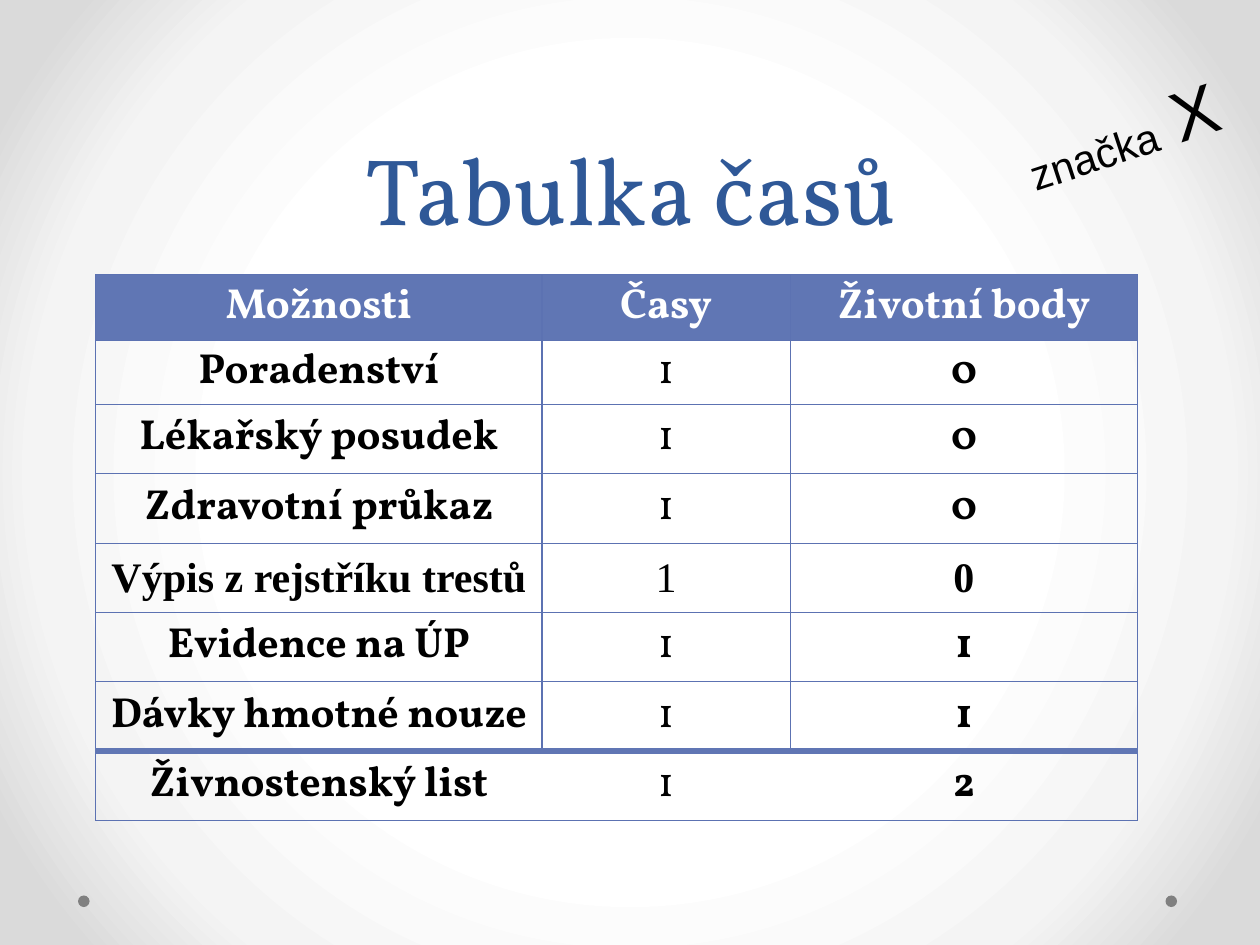
from lxml import etree
from pptx import Presentation
from pptx.dml.color import RGBColor
from pptx.enum.shapes import MSO_SHAPE
from pptx.enum.text import MSO_ANCHOR, PP_ALIGN
from pptx.oxml.ns import qn
from pptx.util import Pt

OVAL = MSO_SHAPE.OVAL
TOP, MIDDLE, BOTTOM = MSO_ANCHOR.TOP, MSO_ANCHOR.MIDDLE, MSO_ANCHOR.BOTTOM
LEFT, CENTER = PP_ALIGN.LEFT, PP_ALIGN.CENTER

HEADER = ("Možnosti", "Časy", "Životní body")
ROWS = [
    ("Poradenství", "1", "0"),
    ("Lékařský posudek", "1", "0"),
    ("Zdravotní průkaz", "1", "0"),
    ("Výpis z rejstříku trestů", "1", "0"),
    ("Evidence na ÚP", "1", "1"),
    ("Dávky hmotné nouze", "1", "1"),
    ("Živnostenský list", "1", "2"),
]
SERIF_ROW = 4
COL_WIDTHS = (254.9, 141.8, 198.7)
ROW_HEIGHTS = (37.4, 36.8) + (39.6,) * 6


def rgb(value):
    """Turn a hex string into a colour."""
    return RGBColor.from_string(value)


def add_color(parent, value):
    """Append a colour element to an XML parent."""
    etree.SubElement(parent, qn("a:srgbClr"), val=value)


class Deck:
    """Hold the style and the current slide."""

    font = "Vollkorn"
    serif = "Times New Roman"
    sans = "Arial"
    black, white = "000000", "FFFFFF"
    title, accent, line, dot = "2F5897", "6076B4", "5C72B2", "808080"
    thin, thick = 0.75, 4

    def __init__(self, prs):
        """Add a blank slide to the presentation."""
        self.s = prs.slides.add_slide(prs.slide_layouts[6])

    def background(self, stops):
        """Fill the background with a radial gradient."""
        self.s.background.fill.gradient()
        grad = self.s.element.find(".//" + qn("a:gradFill"))
        for child in list(grad):
            grad.remove(child)
        gs_list = etree.SubElement(grad, qn("a:gsLst"))
        for pos, color in stops:
            gs = etree.SubElement(gs_list, qn("a:gs"), pos=str(pos * 1000))
            add_color(gs, color)
        circle = etree.SubElement(grad, qn("a:path"), path="circle")
        center = dict.fromkeys("ltrb", "50000")
        etree.SubElement(circle, qn("a:fillToRect"), **center)

    def ellipse(self, x, y, size):
        """Draw a small round dot."""
        sp = self.s.shapes.add_shape(OVAL, Pt(x), Pt(y), Pt(size), Pt(size))
        sp.shadow.inherit = False
        sp.fill.solid()
        sp.fill.fore_color.rgb = rgb(self.dot)
        sp.line.fill.background()

    def run(self, p, text, size, color, name, bold=False):
        """Append a formatted run to a paragraph."""
        r = p.add_run()
        r.text = text
        for key, value in {"size": Pt(size), "name": name, "bold": bold}.items():
            setattr(r.font, key, value)
        r.font.color.rgb = rgb(color)

    def text(self, box, runs, anchor=TOP, rotation=0, **paragraph):
        """Add a text box with one paragraph of runs."""
        sp = self.s.shapes.add_textbox(*map(Pt, box))
        sp.rotation = rotation
        tf = sp.text_frame
        tf.word_wrap = True
        tf.vertical_anchor = anchor
        p = tf.paragraphs[0]
        for key, value in paragraph.items():
            setattr(p, key, value)
        for args in runs:
            self.run(p, *args)

    def border(self, cell, side, width, color):
        """Set one cell border, or hide it when the width is zero."""
        tc_pr = cell._tc.get_or_add_tcPr()
        ln = etree.SubElement(tc_pr, qn("a:ln" + side), w=str(Pt(width)))
        if width:
            add_color(etree.SubElement(ln, qn("a:solidFill")), color)
        else:
            etree.SubElement(ln, qn("a:noFill"))

    def cell(self, cell, text, color, name, bold, fill, borders):
        """Write and style one table cell."""
        style = {"vertical_anchor": MIDDLE, "margin_left": Pt(5), "margin_right": Pt(5),
                 "margin_top": 0, "margin_bottom": 0}
        for key, value in style.items():
            setattr(cell, key, value)
        for side, width in borders.items():
            self.border(cell, side, width, self.accent if width == self.thick else self.line)
        if fill:
            cell.fill.solid()
            cell.fill.fore_color.rgb = rgb(fill)
        else:
            cell.fill.background()
        p = cell.text_frame.paragraphs[0]
        p.alignment = CENTER
        self.run(p, text, 24, color, name, bold)

    def table(self, x, y, rows, widths, heights):
        """Draw the table with a filled header and a ruled-off last row."""
        last, end = len(rows) - 1, len(widths) - 1
        frame = self.s.shapes.add_table(len(rows), len(widths), Pt(x), Pt(y),
                                        Pt(sum(widths)), Pt(sum(heights)))
        table = frame.table
        table.first_row = table.horz_banding = False
        for col, width in zip(table.columns, widths):
            col.width = Pt(width)
        for i, values in enumerate(rows):
            table.rows[i].height = Pt(heights[i])
            header = i == 0
            inner = 0 if i == last else self.thin
            for j, value in enumerate(values):
                borders = {
                    "L": inner if j else self.thin,
                    "R": inner if j < end else self.thin,
                    "T": self.thick if i == last else self.thin,
                    "B": self.thick if i == last - 1 else self.thin,
                }
                self.cell(table.cell(i, j), value,
                          self.white if header else self.black,
                          self.serif if i == SERIF_ROW else self.font,
                          header or j != 1,
                          self.accent if header else None, borders)


def main():
    """Build and save the slide."""
    prs = Presentation()
    prs.slide_width, prs.slide_height = Pt(720), Pt(540)
    deck = Deck(prs)
    deck.background([(50, "FFFFFF"), (76, "F4F4F4"), (92, "DADADA")])
    for x in (666, 44.6):
        deck.ellipse(x, 511.7, 6.6)
    deck.text((36.7, 66.2, 648, 77), [("Tabulka časů", 54, deck.title, deck.font)],
              anchor=BOTTOM, alignment=CENTER, line_spacing=Pt(58))
    deck.table(54.8, 157, [HEADER] + ROWS, COL_WIDTHS, ROW_HEIGHTS)
    deck.text((577.4, 47.5, 136.8, 59),
              [("značka", 24, deck.black, deck.sans), (" X", 40, deck.black, deck.sans)],
              rotation=341.8, alignment=LEFT, space_before=Pt(4.8))
    prs.save("out.pptx")


if __name__ == "__main__":
    main()
